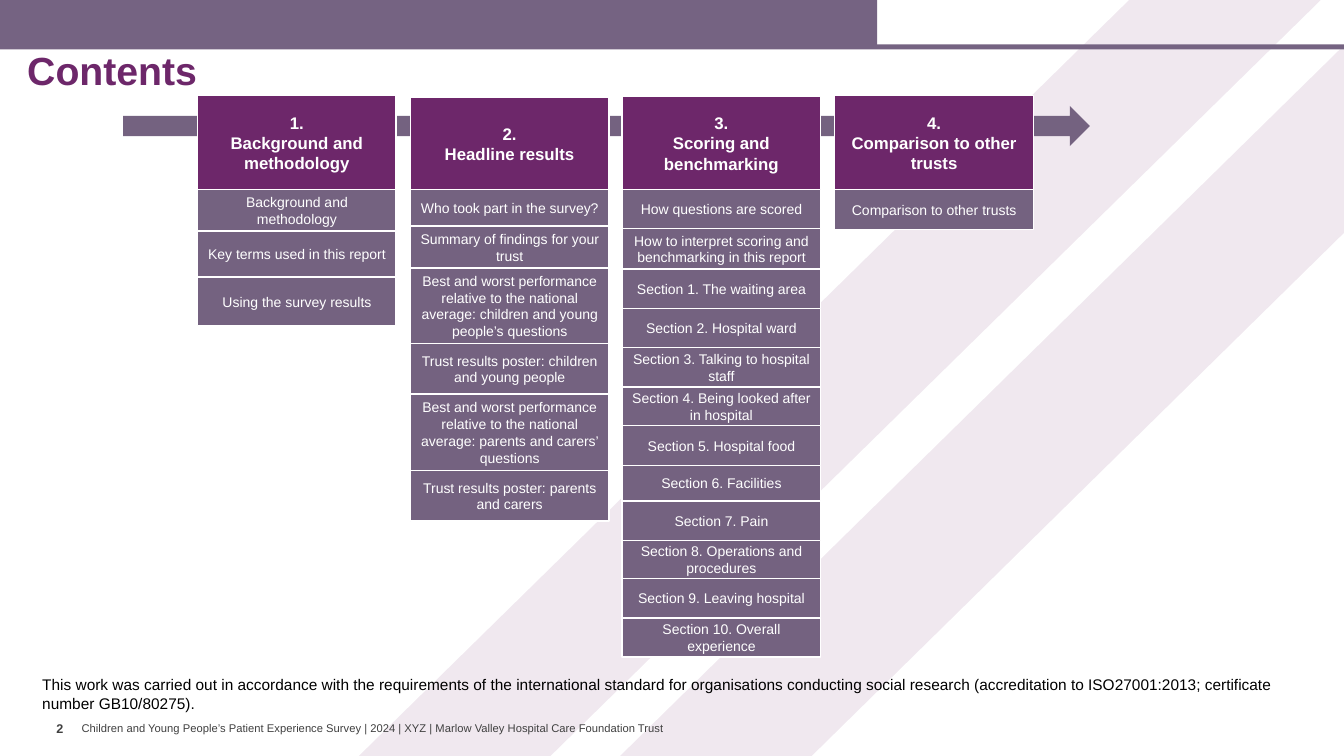
from dataclasses import dataclass

from lxml import etree
from pptx import Presentation
from pptx import util as u
from pptx.dml.color import RGBColor
from pptx.enum import shapes, text
from pptx.oxml.ns import qn

PX = 9144  # 100 px to the inch
PLUM = RGBColor(0x6D, 0x27, 0x6A)
SLATE = RGBColor(0x74, 0x62, 0x80)
BANNER = RGBColor(0x75, 0x63, 0x82)
WHITE = RGBColor(0xFF, 0xFF, 0xFF)
BLACK = RGBColor(0, 0, 0)
GREY = RGBColor(0x40, 0x40, 0x40)
FONT = "Arial"

COLUMN_LEFT, COLUMN_STEP, COLUMN_WIDTH = 196, 632 / 3, 197
TOPICS_TOP = 188


@dataclass
class Topic:
    label: str
    height: int


@dataclass
class Chapter:
    heading: str
    top: int
    topics: list[Topic]


CHAPTERS = [
    Chapter("1.\nBackground and methodology", 95, [
        Topic("Background and methodology", 41),
        Topic("Key terms used in this report", 46),
        Topic("Using the survey results", 48),
    ]),
    Chapter("2.\nHeadline results", 97, [
        Topic("Who took part in the survey?", 36),
        Topic("Summary of findings for your trust", 42),
        Topic("Best and worst performance relative to the national average: "
              "children and young people’s questions", 75),
        Topic("Trust results poster: children and young people", 50),
        Topic("Best and worst performance relative to the national average: "
              "parents and carers’ questions", 76),
        Topic("Trust results poster: parents and carers", 50),
    ]),
    Chapter("3.\nScoring and benchmarking", 96, [
        Topic("How questions are scored", 39),
        Topic("How to interpret scoring and benchmarking in this report", 40),
        Topic("Section 1. The waiting area", 39),
        Topic("Section 2. Hospital ward", 39),
        Topic("Section 3. Talking to hospital staff", 39),
        Topic("Section 4. Being looked after in hospital", 38),
        Topic("Section 5. Hospital food", 40),
        Topic("Section 6. Facilities", 35),
        Topic("Section 7. Pain", 39),
        Topic("Section 8. Operations and procedures", 38),
        Topic("Section 9. Leaving hospital", 39),
        Topic("Section 10. Overall experience", 39),
    ]),
    Chapter("4.\nComparison to other trusts", 95, [
        Topic("Comparison to other trusts", 40),
    ]),
]

BANDS = [
    [(1120, 0), (1310, 0), (546, 750), (356, 750)],
    [(1333, 45), (1333, 231), (805, 750), (615, 750)],
]


def px(*lengths: float) -> list[u.Emu]:
    return [u.Emu(round(length) * PX) for length in lengths]


def write(frame, words: str, *, size: int, color: RGBColor, bold: bool = False,
          align=text.PP_ALIGN.LEFT, anchor=text.MSO_ANCHOR.TOP,
          wrap: bool = True, margins=(10, 5), spacing: float = 1.0) -> None:
    frame.word_wrap = wrap
    frame.auto_size = text.MSO_AUTO_SIZE.NONE
    frame.vertical_anchor = anchor
    side, end = px(*margins)
    frame.margin_left = frame.margin_right = side
    frame.margin_top = frame.margin_bottom = end
    frame.text = words
    for paragraph in frame.paragraphs:
        paragraph.alignment = align
        paragraph.line_spacing = spacing
        font = paragraph.font
        font.name, font.size, font.bold = FONT, u.Pt(size), bold
        font.color.rgb = color


def paint(shape, fill: RGBColor, outlined: bool = False) -> None:
    shape.shadow.inherit = False
    shape.fill.solid()
    shape.fill.fore_color.rgb = fill
    if outlined:
        shape.line.color.rgb = WHITE
        shape.line.width = u.Pt(1)
    else:
        shape.line.fill.background()


def add_block(slide, box, fill: RGBColor, kind=shapes.MSO_SHAPE.RECTANGLE,
              outlined: bool = False):
    block = slide.shapes.add_shape(kind, *px(*box))
    paint(block, fill, outlined)
    return block


def add_band(slide, corners: list[tuple[int, int]]) -> None:
    start, *others = corners
    builder = slide.shapes.build_freeform(*start, scale=PX)
    builder.add_line_segments(others, close=True)
    band = builder.convert_to_shape()
    paint(band, PLUM)
    tint = next(band.fill._xPr.iter(qn("a:srgbClr")))
    etree.SubElement(tint, qn("a:alpha")).set("val", "10000")


def add_cell(slide, box, words: str, fill: RGBColor, size: int, bold: bool = False) -> None:
    cell = add_block(slide, box, fill, outlined=True)
    write(cell.text_frame, words, size=size, color=WHITE, bold=bold,
          align=text.PP_ALIGN.CENTER, anchor=text.MSO_ANCHOR.MIDDLE)


def add_chapter(slide, chapter: Chapter, left: float) -> None:
    add_cell(slide, (left, chapter.top, COLUMN_WIDTH, TOPICS_TOP - chapter.top),
             chapter.heading, PLUM, 12, bold=True)
    top = TOPICS_TOP
    for topic in chapter.topics:
        add_cell(slide, (left, top, COLUMN_WIDTH, topic.height), topic.label, SLATE, 10)
        top += topic.height


def add_note(slide, box, words: str, **style) -> None:
    write(slide.shapes.add_textbox(*px(*box)).text_frame, words, **style)


def main() -> None:
    deck = Presentation()
    deck.slide_width, deck.slide_height = px(1333, 750)
    slide = deck.slides.add_slide(deck.slide_layouts[5])

    # Background bands and top banner
    for corners in BANDS:
        add_band(slide, corners)
    add_block(slide, (0, 44, 1333, 5), BANNER)
    add_block(slide, (0, 0, 870, 47), BANNER)

    # Title
    title = slide.shapes.title
    title.left, title.top, title.width, title.height = px(17, 46, 912, 53)
    write(title.text_frame, "Contents", size=28, color=PLUM, bold=True,
          anchor=text.MSO_ANCHOR.MIDDLE, spacing=0.9)

    # Arrow behind the chapter columns
    add_block(slide, (122, 105, 959, 40), SLATE, shapes.MSO_SHAPE.RIGHT_ARROW)
    for index, chapter in enumerate(CHAPTERS):
        add_chapter(slide, chapter, COLUMN_LEFT + index * COLUMN_STEP)

    # Accreditation note and footer
    add_note(slide, (32, 665, 1268, 47),
             "This work was carried out in accordance with the requirements of the "
             "international standard for organisations conducting social research "
             "(accreditation to ISO27001:2013; certificate number GB10/80275).",
             size=11, color=BLACK)
    add_note(slide, (56, 710, 25, 40), "2", size=9, color=GREY, bold=True,
             wrap=False, margins=(0, 5))
    add_note(slide, (81, 716, 591, 13),
             "Children and Young People’s Patient Experience Survey | 2024 | XYZ | "
             "Marlow Valley Hospital Care Foundation Trust",
             size=8, color=GREY, anchor=text.MSO_ANCHOR.MIDDLE, wrap=False, margins=(0, 0))

    deck.save("out.pptx")


if __name__ == "__main__":
    main()
